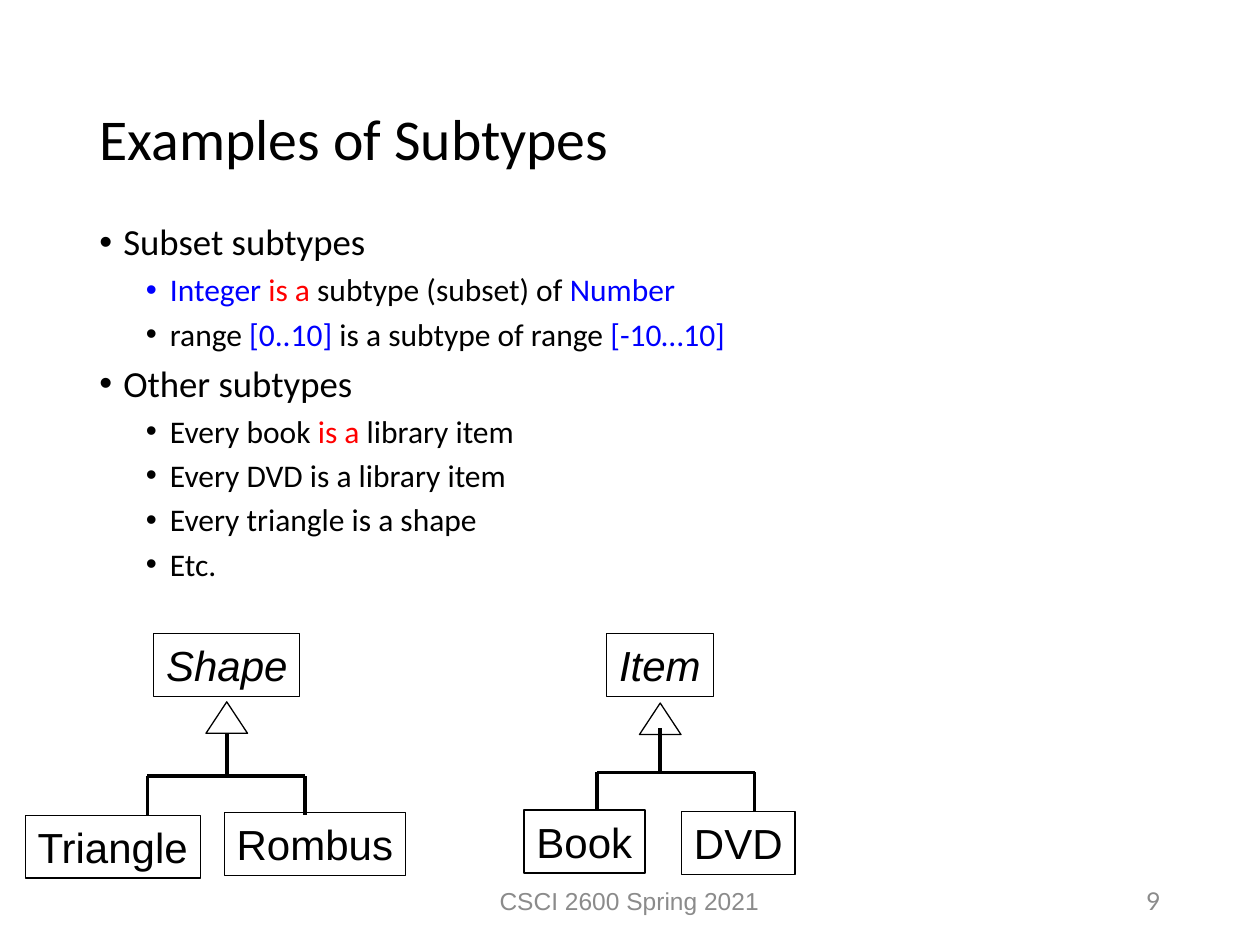
from lxml import etree
from pptx import Presentation
from pptx.dml.color import RGBColor
from pptx.enum.shapes import MSO_CONNECTOR as Connector, MSO_SHAPE as Shape
from pptx.enum.text import MSO_ANCHOR as Anchor, PP_ALIGN as Align
from pptx.oxml.ns import qn
from pptx.util import Inches, Pt

BLACK = RGBColor(0, 0, 0)
WHITE = RGBColor(255, 255, 255)
BLUE = RGBColor(0, 0, 255)
RED = RGBColor(255, 0, 0)
GRAY = RGBColor(0x8B, 0x8B, 0x8B)

# Each outline item is a level and its (text, colour) runs.
OUTLINE = [
    (0, [("Subset subtypes", BLACK)]),
    (1, [("Integer ", BLUE), ("is a", RED), (" subtype (subset) of ", BLACK),
         ("Number", BLUE)]),
    (1, [("range ", BLACK), ("[0..10]", BLUE),
         (" is a subtype of range ", BLACK), ("[-10…10]", BLUE)]),
    (0, [("Other subtypes", BLACK)]),
    (1, [("Every book ", BLACK), ("is a ", RED), ("library item", BLACK)]),
    (1, [("Every DVD is a library item", BLACK)]),
    (1, [("Every triangle is a shape", BLACK)]),
    (1, [("Etc.", BLACK)]),
]


def add_run(paragraph, text, size=18, font="Calibri", color=BLACK, italic=False):
    run = paragraph.add_run()
    run.text = text
    run.font.size = Pt(size)
    run.font.name = font
    run.font.color.rgb = color
    run.font.italic = italic


def add_frame(slide, left, top, width, height, anchor=Anchor.TOP):
    """Add a wrapping text box and return its text frame."""
    box = slide.shapes.add_textbox(
        Inches(left), Inches(top), Inches(width), Inches(height))
    frame = box.text_frame
    frame.word_wrap = True
    frame.vertical_anchor = anchor
    return frame


def add_label(slide, text, *place, align=Align.LEFT, spacing=1.0, **style):
    """Add one line of text, centred vertically in its place."""
    paragraph = add_frame(slide, *place, anchor=Anchor.MIDDLE).paragraphs[0]
    paragraph.alignment = align
    paragraph.line_spacing = spacing
    add_run(paragraph, text, **style)


def set_bullet(paragraph, indent, color):
    props = paragraph._p.get_or_add_pPr()
    props.set("marL", str(Inches(indent)))
    props.set("indent", str(-Inches(0.19)))
    bullet_color = etree.SubElement(props, qn("a:buClr"))
    etree.SubElement(bullet_color, qn("a:srgbClr"), val=str(color))
    etree.SubElement(props, qn("a:buFont"), typeface="Arial")
    etree.SubElement(props, qn("a:buChar"), char="•")


def add_outline(slide, items, *place):
    frame = add_frame(slide, *place)
    for index, (level, runs) in enumerate(items):
        paragraph = frame.add_paragraph() if index else frame.paragraphs[0]
        paragraph.level = level
        paragraph.line_spacing = 1.0 if level else 0.9
        paragraph.space_before = Pt(3.7 if level else 7.5)
        set_bullet(paragraph, 0.56 if level else 0.19, runs[0][1])
        for text, color in runs:
            add_run(paragraph, text, size=18 if level else 21, color=color)


def add_outlined(slide, kind, left, top, width, height):
    shape = slide.shapes.add_shape(
        kind, Inches(left), Inches(top), Inches(width), Inches(height))
    shape.shadow.inherit = False
    shape.line.color.rgb = BLACK
    shape.line.width = Pt(0.75)
    return shape


def add_class_box(slide, name, left, top, width, italic=False):
    box = add_outlined(slide, Shape.RECTANGLE, left, top, width, 0.5)
    box.fill.background()
    frame = box.text_frame
    frame.word_wrap = False
    frame.vertical_anchor = Anchor.TOP
    frame.paragraphs[0].alignment = Align.LEFT
    add_run(frame.paragraphs[0], name, size=24, font="Arial", italic=italic)


def add_line(slide, x1, y1, x2, y2):
    line = slide.shapes.add_connector(
        Connector.STRAIGHT, Inches(x1), Inches(y1), Inches(x2), Inches(y2))
    line.line.color.rgb = BLACK
    line.line.width = Pt(2)
    etree.SubElement(line._element.spPr, qn("a:effectLst"))


def add_hierarchy(slide, parent, children, center, arrow_top, stem_top, bar_y,
                  bar_left):
    """Draw a parent class, its inheritance arrow and its child classes."""
    name, width = parent
    add_class_box(slide, name, center - width / 2, 5.03, width, italic=True)
    for child in children:
        add_class_box(slide, *child)
    arrow = add_outlined(
        slide, Shape.ISOSCELES_TRIANGLE, center - 0.165, arrow_top, 0.33, 0.25)
    arrow.fill.solid()
    arrow.fill.fore_color.rgb = WHITE
    bar_right = bar_left + 1.25
    add_line(slide, center, stem_top, center, bar_y)
    add_line(slide, bar_left, bar_y, bar_right, bar_y)
    for x in (bar_left, bar_right):
        add_line(slide, x, bar_y, x, bar_y + 0.31)


def main():
    deck = Presentation()
    deck.slide_width, deck.slide_height = Inches(10), Inches(7.5)
    slide = deck.slides.add_slide(deck.slide_layouts[6])

    add_label(slide, "Examples of Subtypes", 0.69, 0.4, 8.62, 1.45,
              spacing=0.9, size=33)
    add_outline(slide, OUTLINE, 0.69, 1.73, 8.62, 4.76)
    add_label(slide, "CSCI 2600 Spring 2021", 3.31, 6.95, 3.37, 0.4,
              align=Align.CENTER, size=14, font="Arial", color=GRAY)
    add_label(slide, "9", 7.06, 6.95, 2.25, 0.4,
              align=Align.RIGHT, size=14, font="Lato", color=GRAY)

    add_hierarchy(
        slide, ("Shape", 1.16),
        [("Triangle", 0.2, 6.47, 1.39), ("Rombus", 1.78, 6.45, 1.44)],
        center=1.8, arrow_top=5.57, stem_top=5.82, bar_y=6.16, bar_left=1.17)
    add_hierarchy(
        slide, ("Item", 0.85),
        [("Book", 4.16, 6.43, 0.96), ("DVD", 5.41, 6.44, 0.9)],
        center=5.24, arrow_top=5.58, stem_top=5.78, bar_y=6.13, bar_left=4.74)

    deck.save("out.pptx")


if __name__ == "__main__":
    main()
